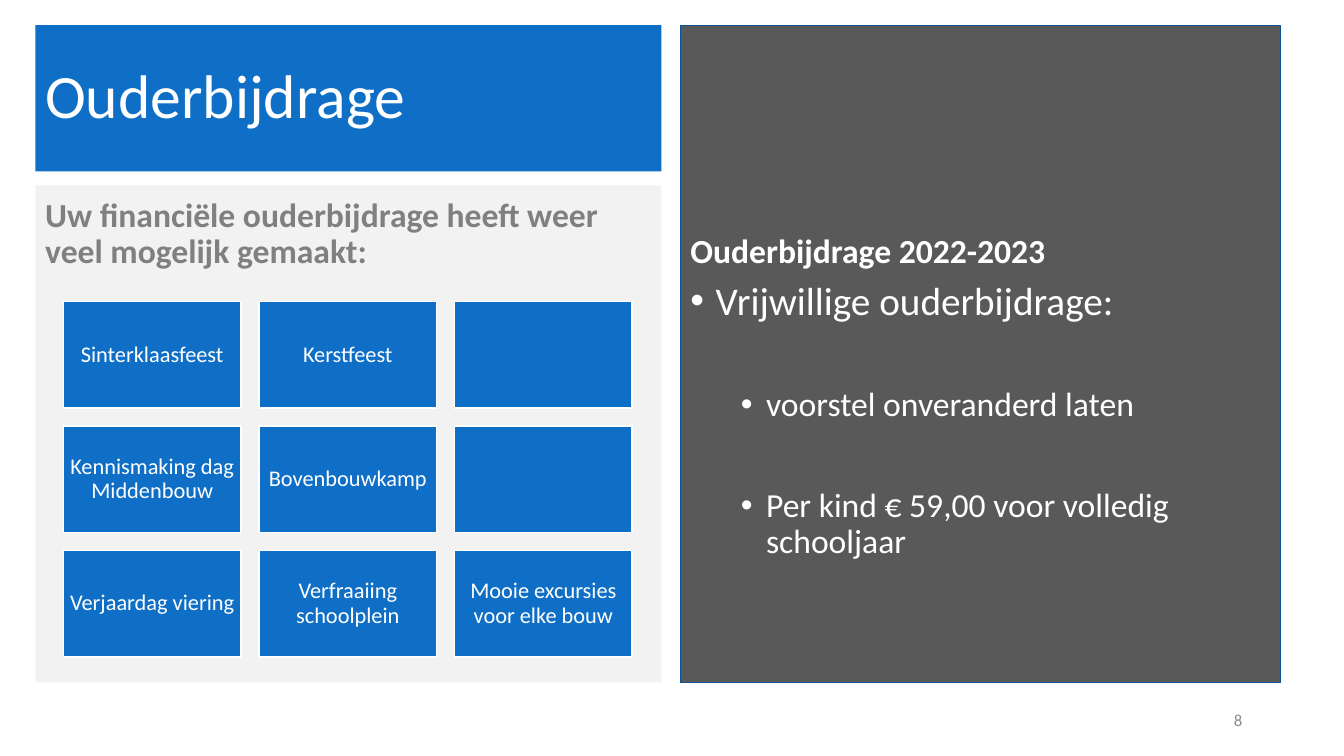
import pptx
import pptx.util
import pptx.dml.color
import pptx.enum.shapes
import pptx.enum.text
import pptx.oxml.ns
from lxml import etree

Inches = pptx.util.Inches
Pt = pptx.util.Pt
ALIGN = pptx.enum.text.PP_ALIGN
ANCHOR = pptx.enum.text.MSO_ANCHOR

COLORS = {
    "blue": "0F6FC6",
    "navy": "0B5292",
    "dark": "595959",
    "pale": "F2F2F2",
    "white": "FFFFFF",
    "heading": "808080",
    "number": "8C8C8C",
}


class Page:
    font = "Calibri"
    line_spacing = 0.9

    def __init__(self, deck):
        self.shapes = deck.slides.add_slide(deck.slide_layouts[6]).shapes

    def color(self, name):
        return pptx.dml.color.RGBColor.from_string(COLORS[name])

    def panel(self, left, top, width, height, fill, line=None):
        panel = self.shapes.add_shape(
            pptx.enum.shapes.MSO_SHAPE.RECTANGLE,
            Inches(left), Inches(top), Inches(width), Inches(height))
        panel.shadow.inherit = False
        panel.fill.solid()
        panel.fill.fore_color.rgb = self.color(fill)
        if line:
            panel.line.color.rgb = self.color(line)
            panel.line.width = Pt(1)
        else:
            panel.line.fill.background()
        return panel

    def box(self, left, top, width, height, anchor=ANCHOR.TOP):
        box = self.shapes.add_textbox(
            Inches(left), Inches(top), Inches(width), Inches(height))
        box.text_frame.word_wrap = True
        box.text_frame.vertical_anchor = anchor
        return box

    def style(self, para, size, color, bold=False, align=ALIGN.LEFT):
        para.alignment = align
        para.line_spacing = self.line_spacing
        para.font.name = self.font
        para.font.size = Pt(size)
        para.font.bold = bold
        para.font.color.rgb = self.color(color)

    def text(self, shape, words, size, color, **options):
        para = shape.text_frame.paragraphs[0]
        para.text = words
        self.style(para, size, color, **options)

    def tile(self, left, top, width, height, words):
        tile = self.panel(left, top, width, height, "blue", "white")
        frame = tile.text_frame
        frame.word_wrap = True
        frame.vertical_anchor = ANCHOR.MIDDLE
        frame.margin_left = frame.margin_right = Inches(0.05)
        if words:
            self.text(tile, words, 16, "white", align=ALIGN.CENTER)

    def bullets(self, box, items):
        """Fill the box with (words, size, indent in inches, space before)."""
        frame = box.text_frame
        for index, (words, size, indent, before) in enumerate(items):
            para = frame.add_paragraph() if index else frame.paragraphs[0]
            para.text = words
            props = para._p.get_or_add_pPr()
            props.set("marL", str(Inches(indent)))
            props.set("indent", str(Inches(-0.25)))
            tag = pptx.oxml.ns.qn
            etree.SubElement(props, tag("a:buFont"), typeface="Arial")
            etree.SubElement(props, tag("a:buChar"), char="•")
            para.space_before = Pt(before)
            self.style(para, size, "white")


def main():
    deck = pptx.Presentation()
    deck.slide_width = Inches(13.33)
    deck.slide_height = Inches(7.5)
    page = Page(deck)

    page.panel(6.75, 0.25, 5.95, 6.52, "dark", "navy")
    page.panel(0.35, 1.84, 6.21, 4.93, "pale")

    title = page.panel(0.35, 0.25, 6.21, 1.45, "blue")
    title.text_frame.vertical_anchor = ANCHOR.MIDDLE
    page.text(title, "Ouderbijdrage", 44, "white")

    page.text(page.box(0.35, 1.84, 6.21, 0.9, ANCHOR.BOTTOM),
              "Uw financiële ouderbijdrage heeft weer veel mogelijk gemaakt:",
              24, "heading", bold=True)

    activities = [
        ["Sinterklaasfeest", "Kerstfeest", ""],
        ["Kennismaking dag Middenbouw", "Bovenbouwkamp", ""],
        ["Verjaardag viering", "Verfraaiing schoolplein",
         "Mooie excursies voor elke bouw"],
    ]
    for row, names in enumerate(activities):
        for column, name in enumerate(names):
            page.tile(0.63 + 1.94 * column, 2.99 + 1.235 * row,
                      1.76, 1.06, name)

    page.text(page.box(6.75, 1.84, 5.67, 0.9, ANCHOR.BOTTOM),
              "Ouderbijdrage 2022-2023", 24, "white", bold=True)
    page.bullets(page.box(6.75, 2.74, 5.67, 4.03), [
        ("Vrijwillige ouderbijdrage:", 28, 0.25, 0),
        ("voorstel onveranderd laten", 24, 0.75, 46),
        ("Per kind € 59,00 voor volledig schooljaar", 24, 0.75, 46),
    ])

    page.text(page.box(9.42, 6.95, 3, 0.4, ANCHOR.MIDDLE),
              "8", 12, "number", align=ALIGN.RIGHT)

    deck.save("out.pptx")


if __name__ == "__main__":
    main()
